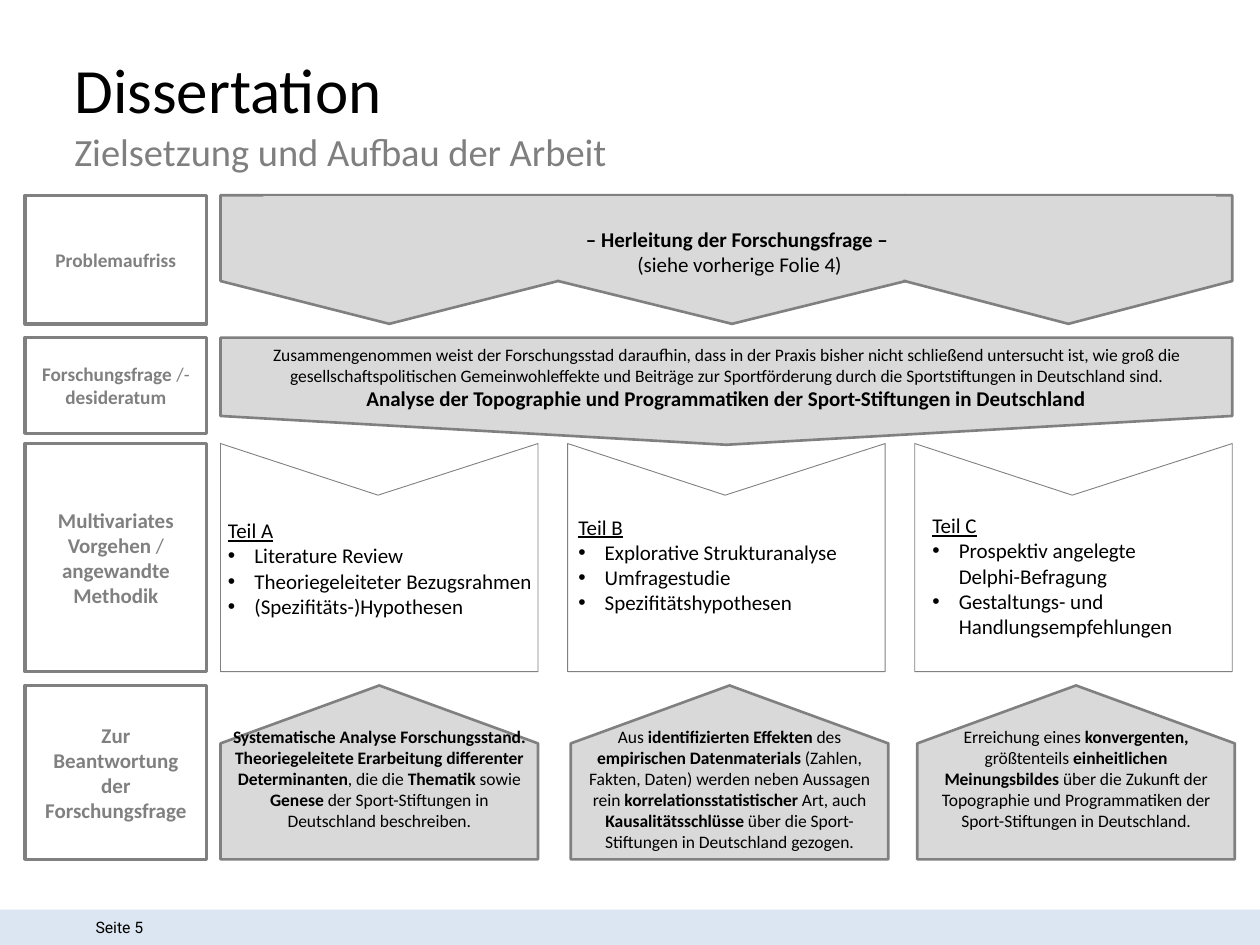
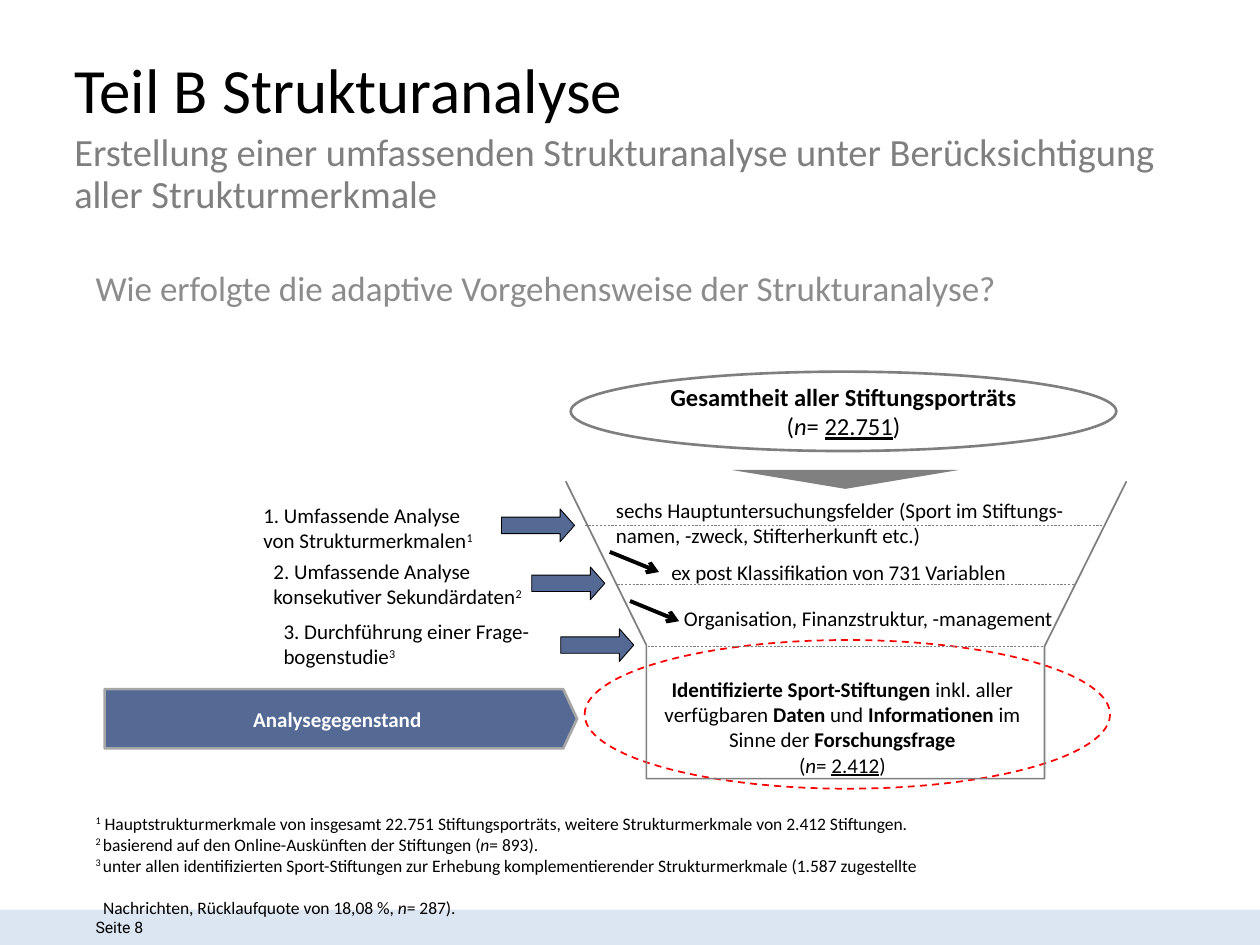
from lxml.etree import SubElement
from pptx import Presentation
from pptx.dml.color import RGBColor
from pptx.enum.dml import MSO_LINE
from pptx.enum.shapes import MSO_CONNECTOR, MSO_SHAPE as SHAPE
from pptx.enum.text import MSO_ANCHOR as ANCHOR, PP_ALIGN as ALIGN
from pptx.oxml.ns import qn
from pptx.util import Inches, Pt

COLORS = {
    "black": "000000", "white": "FFFFFF", "band": "DCE6F2",
    "subtitle": "7F7F7F", "question": "8C8C8C", "outline": "808080",
    "panel": "D9D9D9", "navy": "002060", "silver": "A6A6A6", "red": "FF0000",
}
INSETS = (0.1, 0.05, 0.1, 0.05)
TIGHT = (0.08, 0.08, 0.08, 0.08)
FLUSH = (0, 0, 0, 0)
CALLOUT = (4.691, 2.346, 0.333, 0.667)
MARKS = {"*": "bold", "~": "italic", "_": "underline", "^": "superscript"}
COLUMN_LEFT, COLUMN_WIDTH, COLUMN_STEP = 1.75, 2.52, 2.755


def rgb(name):
    return RGBColor.from_string(COLORS[name])


def add_run(paragraph, text, styles):
    run = paragraph.add_run()
    run.text = text
    for style in styles - {"superscript"}:
        setattr(run.font, style, True)
    if "superscript" in styles:
        run._r.get_or_add_rPr().set("baseline", "30000")


def add_marked_text(paragraph, marked):
    styles, text = set(), ""
    for char in marked + "\0":
        if char not in MARKS and char not in "\n\0":
            text += char
            continue
        if text:
            add_run(paragraph, text, styles)
            text = ""
        if char == "\n":
            paragraph.add_line_break()
        elif char in MARKS:
            styles ^= {MARKS[char]}


def set_font(paragraph, size, color="black", face="Calibri"):
    font = paragraph.font
    font.size, font.name = Pt(size), face
    font.color.rgb = rgb(color)


def add_bullet(paragraph):
    properties = paragraph._p.get_or_add_pPr()
    properties.set("marL", str(Inches(0.21)))
    properties.set("indent", str(Inches(-0.21)))
    SubElement(properties, qn("a:buFont"), typeface="Arial")
    SubElement(properties, qn("a:buChar"), char="•")


def write(shape, lines, size, color="black", face="Calibri", align=ALIGN.LEFT,
          anchor=ANCHOR.TOP, insets=INSETS, wrap=True, bullets=False):
    frame = shape.text_frame
    frame.word_wrap, frame.vertical_anchor = wrap, anchor
    (frame.margin_left, frame.margin_top,
     frame.margin_right, frame.margin_bottom) = map(Inches, insets)
    for index, line in enumerate(lines):
        paragraph = frame.add_paragraph() if index else frame.paragraphs[0]
        paragraph.alignment = align
        if bullets and index:
            add_bullet(paragraph)
        add_marked_text(paragraph, line)
        set_font(paragraph, size, color, face)
    return frame


def add_text(slide, box, lines, size, **options):
    return write(slide.shapes.add_textbox(*map(Inches, box)), lines, size, **options)


def style_line(line, color, width, dash=None):
    line.color.rgb = rgb(color)
    line.width = Pt(width)
    if dash:
        line.dash_style = dash


def add_box(slide, kind, box, fill, line=None, adjust=(), alpha=None, rotation=0):
    shape = slide.shapes.add_shape(kind, *map(Inches, box))
    shape.shadow.inherit = False
    shape.rotation = rotation
    for index, value in enumerate(adjust):
        shape.adjustments[index] = value
    shape.fill.solid()
    shape.fill.fore_color.rgb = rgb(fill)
    if alpha:
        color = shape._element.spPr.find(qn("a:solidFill")).find(qn("a:srgbClr"))
        SubElement(color, qn("a:alpha"), val=str(alpha * 1000))
    if line:
        style_line(shape.line, *line)
    else:
        shape.line.fill.background()
    return shape


def add_outline(slide, points, color, width, close=True):
    start, *rest = [(Inches(x), Inches(y)) for x, y in points]
    builder = slide.shapes.build_freeform(*start)
    builder.add_line_segments(rest, close=close)
    shape = builder.convert_to_shape()
    shape.shadow.inherit = False
    shape.fill.background()
    style_line(shape.line, color, width)


def add_line(slide, start, end, color, width, dash=None, arrow=False):
    connector = slide.shapes.add_connector(
        MSO_CONNECTOR.STRAIGHT, *map(Inches, start + end))
    style_line(connector.line, color, width, dash)
    if arrow:
        SubElement(connector.line._get_or_add_ln(), qn("a:tailEnd"), type="arrow")
    SubElement(connector._element.spPr, qn("a:effectLst"))


def add_page(deck, number, title, subtitle):
    slide = deck.slides.add_slide(deck.slide_layouts[6])
    add_box(slide, SHAPE.RECTANGLE, (-0.01, 7.22, 10.01, 0.28), "band")
    add_text(slide, (0.66, 7.24, 2.05, 0.24), [f"Seite {number}"], 9,
             face="Roboto", anchor=ANCHOR.MIDDLE)
    headings = (
        (title, (0.59, 0.47, 12.15, 1.18), 36, "black"),
        (subtitle, (0.59, 1.06, 8.74, 0.59), 22, "subtitle"),
    )
    for text, box, size, color in headings:
        frame = add_text(slide, box, [text], size, color=color, insets=FLUSH)
        frame.paragraphs[0].line_spacing = 0.9
    return slide


def add_stage_labels(slide):
    stages = (
        (1.55, 1.02, 11, "*Problemaufriss*"),
        (2.68, 0.76, 11, "*Forschungsfrage */-*desideratum*"),
        (3.52, 1.81, 12, "*Multivariates Vorgehen */ *angewandte Methodik*"),
        (5.44, 1.38, 12, "*Zur Beantwortung der Forschungsfrage*"),
    )
    for top, height, size, label in stages:
        stage = add_box(slide, SHAPE.RECTANGLE, (0.2, top, 1.44, height),
                        "white", ("outline", 2))
        write(stage, [label], size, color="outline", align=ALIGN.CENTER,
              anchor=ANCHOR.MIDDLE)


def add_derivation(slide):
    for left, width in ((1.75, 2.68), (4.43, 2.76), (7.18, 2.6)):
        add_box(slide, SHAPE.DOWN_ARROW_CALLOUT, (left, 1.55, width, 1.02),
                "panel", ("outline", 1.5), CALLOUT)
    derivation = add_box(slide, SHAPE.RECTANGLE, (2.09, 1.55, 7.56, 0.67), "panel")
    write(derivation, ["*– Herleitung der Forschungsfrage – *",
                       "(siehe vorherige Folie 4)"],
          12, align=ALIGN.CENTER, insets=(0.1, 0.25, 0.1, 0.05))
    add_line(slide, (1.75, 1.55), (9.78, 1.55), "outline", 0.75)


def add_research_question(slide):
    question = add_box(slide, SHAPE.DOWN_ARROW_CALLOUT, (1.75, 2.68, 8.03, 0.85),
                       "panel", ("outline", 1.5), (14.571, 7.286, 0.269, 0.504))
    frame = write(question, [
        "Zusammengenommen weist der Forschungsstad daraufhin, dass in der Praxis "
        "bisher nicht schließend untersucht ist, wie groß die "
        "gesellschaftspolitischen Gemeinwohleffekte und Beiträge zur "
        "Sportförderung durch die Sportstiftungen in Deutschland sind.",
        "*Analyse der Topographie und Programmatiken der Sport-Stiftungen "
        "in Deutschland*",
    ], 10, align=ALIGN.CENTER, anchor=ANCHOR.MIDDLE, insets=(0.08, 0.28, 0.08, 0.08))
    frame.paragraphs[1].font.size = Pt(12)


def add_methods(slide):
    parts = (
        ((1.73, 4.03, 2.8, 1.1), ["_Teil A_", "Literature Review",
                                  "Theoriegeleiteter Bezugsrahmen",
                                  "(Spezifitäts-)Hypothesen"]),
        ((4.51, 4, 2.4, 1.1), ["_Teil B_", "Explorative Strukturanalyse",
                               "Umfragestudie", "Spezifitätshypothesen"]),
        ((7.32, 3.99, 2.8, 1.1), ["_Teil C_",
                                  "Prospektiv angelegte \nDelphi-Befragung",
                                  "Gestaltungs- und Handlungsempfehlungen"]),
    )
    top, notch, bottom = 3.52, 3.93, 5.33
    for index, (box, lines) in enumerate(parts):
        left = COLUMN_LEFT + index * COLUMN_STEP
        right = left + COLUMN_WIDTH
        add_outline(slide, [(right, bottom), (right, top), (left + 1.25, notch),
                            (left, top), (left, bottom)], "outline", 0.5)
        add_text(slide, box, lines, 12, insets=TIGHT, bullets=True)


def add_answers(slide):
    answers = (
        (1.75, ["*Systematische Analyse Forschungsstand.*",
                "*Theoriegeleitete Erarbeitung differenter Determinanten*, die die "
                "*Thematik *sowie *Genese *der Sport-Stiftungen in Deutschland "
                "beschreiben."]),
        (4.53, ["Aus* identifizierten Effekten *des *empirischen Datenmaterials *"
                "(Zahlen, Fakten, Daten) werden neben Aussagen rein"
                "* korrelationsstatistischer *Art, auch *Kausalitätsschlüsse *"
                "über die Sport-Stiftungen in Deutschland gezogen."]),
        (7.28, ["Erreichung eines *konvergenten, *größtenteils *einheitlichen "
                "Meinungsbildes *über die Zukunft der Topographie und "
                "Programmatiken der Sport-Stiftungen in Deutschland."]),
    )
    for left, lines in answers:
        add_box(slide, SHAPE.DOWN_ARROW_CALLOUT, (left, 5.44, COLUMN_WIDTH, 1.38),
                "panel", ("outline", 1.5), CALLOUT, rotation=180)
        add_text(slide, (left, 5.71, COLUMN_WIDTH, 1.11), lines, 10,
                 align=ALIGN.CENTER)


def add_funnel(slide):
    add_box(slide, SHAPE.OVAL, (4.64, 5.08, 4.17, 1.18), "white",
            ("red", 1, MSO_LINE.DASH))
    portraits = add_box(slide, SHAPE.OVAL, (4.53, 2.95, 4.33, 0.63), "white",
                        ("subtitle", 1.5))
    write(portraits, ["*Gesamtheit aller Stiftungsporträts*\n(~n~= _22.751_)"], 14,
          align=ALIGN.CENTER, anchor=ANCHOR.MIDDLE, insets=FLUSH)
    add_box(slide, SHAPE.ISOSCELES_TRIANGLE, (5.81, 3.73, 1.8, 0.15), "outline",
            rotation=180)
    add_outline(slide, [(4.49, 3.82), (5.13, 5.12), (5.13, 6.18), (8.29, 6.18),
                        (8.29, 5.13), (8.94, 3.82)], "subtitle", 1, close=False)
    for left, right, level in ((4.64, 8.77, 4.17), (4.9, 8.53, 4.64),
                               (5.14, 8.29, 5.13)):
        add_line(slide, (left, level), (right, level), "subtitle", 0.3, MSO_LINE.DASH)


def add_steps(slide):
    steps = (
        ((2.01, 3.99, 1.81, 0.39), (3.98, 4.04),
         "1. Umfassende Analyse \nvon Strukturmerkmalen^1^"),
        ((2.09, 4.5, 2.05, 0.26), (4.22, 4.5),
         "2. Umfassende Analyse \nkonsekutiver Sekundärdaten^2^"),
        ((2.17, 4.98, 2.21, 0.26), (4.45, 4.99),
         "3. Durchführung einer Frage-\nbogenstudie^3^"),
    )
    for box, arrow, text in steps:
        add_box(slide, SHAPE.RIGHT_ARROW, arrow + (0.58, 0.26), "navy",
                ("black", 0.5), (0.5, 0.44), alpha=67)
        step = add_box(slide, SHAPE.RECTANGLE, box, "white")
        write(step, [text], 12, anchor=ANCHOR.MIDDLE, insets=TIGHT, wrap=False)
    subject = add_box(slide, SHAPE.PENTAGON, (0.83, 5.47, 3.75, 0.47), "navy",
                      ("silver", 1.5), (0.233,), alpha=67)
    write(subject, ["*Analysegegenstand*"], 12, color="white", align=ALIGN.CENTER,
          anchor=ANCHOR.MIDDLE, insets=(0.04, 0, 0.04, 0))


def add_funnel_texts(slide):
    add_text(slide, (5.14, 5.32, 3.09, 0.91), [
        "*Identifizierte Sport-Stiftungen* inkl. aller verfügbaren *Daten* und "
        "*Informationen* im Sinne der *Forschungsfrage*\n(~n~= _2.412_)",
    ], 12, align=ALIGN.CENTER)
    filters = (
        ((4.79, 3.9, 3.83, 0.5), "sechs Hauptuntersuchungsfelder (Sport im "
                                 "Stiftungs-namen, -zweck, Stifterherkunft etc.)"),
        ((5.23, 4.39, 3.05, 0.3), "ex post Klassifikation von 731 Variablen"),
        ((5.33, 4.76, 3.21, 0.3), "Organisation, Finanzstruktur, -management"),
    )
    for box, text in filters:
        add_text(slide, box, [text], 12)
    for x, y in ((4.84, 4.38), (5, 4.77)):
        add_line(slide, (x, y), (x + 0.39, y + 0.16), "black", 2.25, arrow=True)


def add_footnotes(slide):
    frame = add_text(slide, (0.66, 6.4, 7.01, 0.77), [
        "^1^ Hauptstrukturmerkmale von insgesamt 22.751 Stiftungsporträts, weitere "
        "Strukturmerkmale von 2.412 Stiftungen.",
        "^2 ^basierend auf den Online-Auskünften der Stiftungen (~n~= 893).",
        "^3 ^unter allen identifizierten Sport-Stiftungen zur Erhebung "
        "komplementierender Strukturmerkmale (1.587 zugestellte",
        "Nachrichten, Rücklaufquote von 18,08 %, ~n~= 287).",
    ], 10)
    continuation = frame.paragraphs[-1]
    continuation.space_before = Pt(12)
    continuation._p.get_or_add_pPr().set("marL", str(Inches(0.06)))


def main():
    deck = Presentation()
    deck.slide_width, deck.slide_height = Inches(10), Inches(7.5)

    structure = add_page(deck, 5, "Dissertation", "Zielsetzung und Aufbau der Arbeit")
    add_stage_labels(structure)
    add_derivation(structure)
    add_methods(structure)
    add_research_question(structure)
    add_answers(structure)

    analysis = add_page(deck, 8, "Teil B Strukturanalyse",
                        "Erstellung einer umfassenden Strukturanalyse unter "
                        "Berücksichtigung aller Strukturmerkmale")
    add_text(analysis, (0.66, 2.01, 8.82, 0.54),
             ["Wie erfolgte die adaptive Vorgehensweise der Strukturanalyse?"],
             20, color="question", anchor=ANCHOR.MIDDLE)
    add_funnel(analysis)
    add_steps(analysis)
    add_funnel_texts(analysis)
    add_footnotes(analysis)

    deck.save("out.pptx")


if __name__ == "__main__":
    main()
